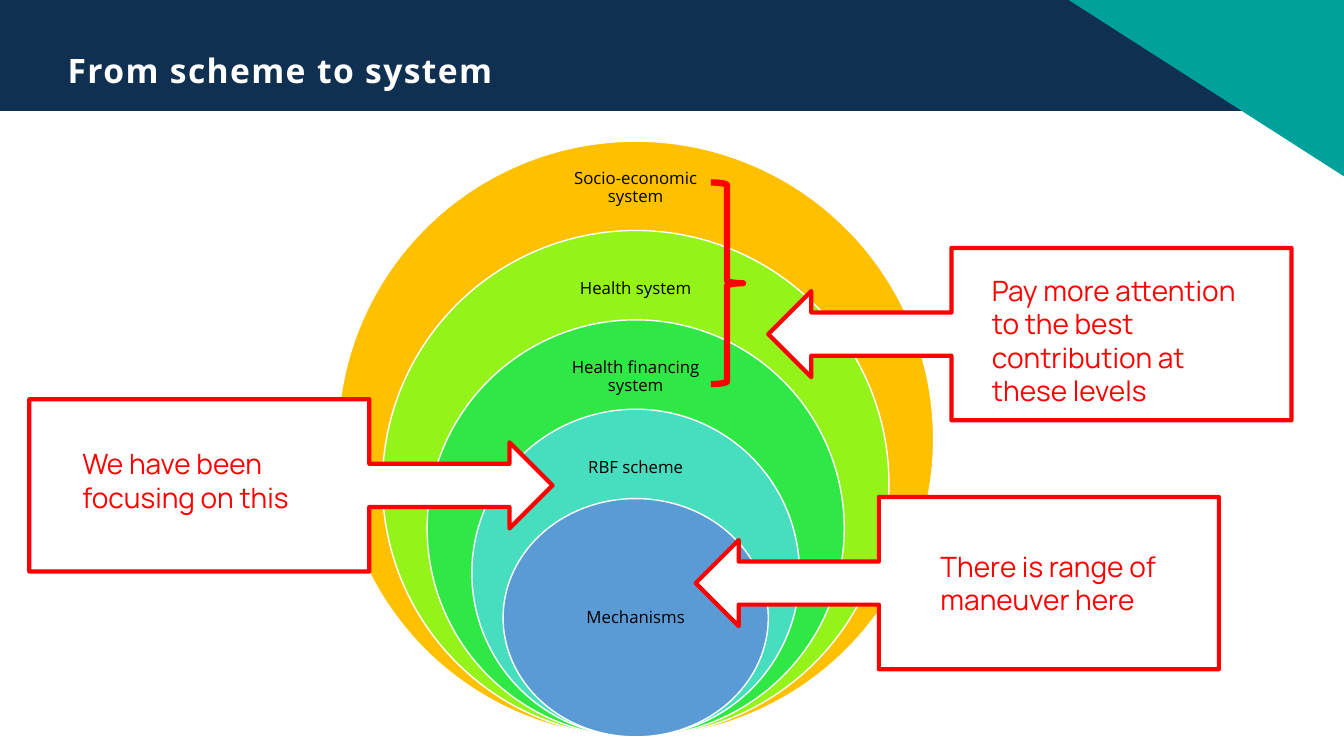
from dataclasses import dataclass

from pptx import Presentation
from pptx.dml.color import RGBColor
from pptx.enum.shapes import MSO_SHAPE
from pptx.enum.text import MSO_ANCHOR, PP_ALIGN
from pptx.util import Inches, Pt

RECTANGLE = MSO_SHAPE.RECTANGLE
TRIANGLE = MSO_SHAPE.ISOSCELES_TRIANGLE
OVAL = MSO_SHAPE.OVAL
ARROW_CALLOUT = MSO_SHAPE.LEFT_ARROW_CALLOUT
BRACE = MSO_SHAPE.RIGHT_BRACE
LEFT, CENTER = PP_ALIGN.LEFT, PP_ALIGN.CENTER
TOP, MIDDLE, BOTTOM = MSO_ANCHOR.TOP, MSO_ANCHOR.MIDDLE, MSO_ANCHOR.BOTTOM

NAVY = RGBColor(0x0F, 0x30, 0x51)
TEAL = RGBColor(0x00, 0xA1, 0x9A)
WHITE = RGBColor(0xFF, 0xFF, 0xFF)
BLACK = RGBColor(0x00, 0x00, 0x00)
RED = RGBColor(0xFF, 0x00, 0x00)
AMBER = RGBColor(0xFF, 0xC0, 0x00)
LIME = RGBColor(0x94, 0xF3, 0x19)
GREEN = RGBColor(0x30, 0xE8, 0x45)
AQUA = RGBColor(0x46, 0xDE, 0xBF)
BLUE = RGBColor(0x5B, 0x9B, 0xD5)

SLIDE_WIDTH, SLIDE_HEIGHT = Inches(13.33), Inches(7.5)

TITLE_FONT = {"name": "Open Sans", "size": Pt(24), "bold": True}
LABEL_FONT = {"name": "Open Sans", "size": Pt(12)}
CALLOUT_FONT = {"name": "Manrope", "size": Pt(20)}


@dataclass(frozen=True)
class Box:
    """Place and size in percent of the slide's width and height."""
    left: float
    top: float
    width: float
    height: float

    def lengths(self) -> tuple[int, int, int, int]:
        return (int(SLIDE_WIDTH * self.left / 100),
                int(SLIDE_HEIGHT * self.top / 100),
                int(SLIDE_WIDTH * self.width / 100),
                int(SLIDE_HEIGHT * self.height / 100))


@dataclass(frozen=True)
class Level:
    label: str
    color: RGBColor
    label_middle: float
    label_width: float
    label_height: float = 5.5


@dataclass(frozen=True)
class Callout:
    text: str
    left: float
    top: float
    text_box: Box
    rotation: float = 0


# Nested levels, outermost first: all share one centre line and one bottom
CENTER_LINE, LEVEL_BOTTOM = 47.3, 97.47
FIRST_TOP, LEVEL_STEP = 18.67, 11.82
INNERMOST_WIDTH = 19.73
LEVELS = [
    Level("Socio-economic system", AMBER, 24.87, 11.78),
    Level("Health system", LIME, 38.2, 11.48),
    Level("Health financing system", GREEN, 49.87, 11.33),
    Level("RBF scheme", AQUA, 61.93, 9.3),
    Level("Mechanisms", BLUE, 81.73, 9.83, 11.2),
]

CALLOUT_WIDTH, CALLOUT_HEIGHT = 38.93, 22.8
CALLOUTS = [
    Callout("There is range of maneuver here", 51.76, 65.73,
            Box(69.24, 72, 21.46, 10.27)),
    Callout("We have been focusing on this", 2.18, 52.8,
            Box(5.4, 58.4, 21.46, 10.27), rotation=180),
    Callout("Pay more attention to the best contribution at these levels",
            57.16, 32.8, Box(73.07, 35.47, 21.46, 19.33)),
]


def apply_format(target, values: dict) -> None:
    for name, value in values.items():
        setattr(target, name, value)


def add_shape(slide, kind, box: Box, fill: RGBColor | None = None,
              line: RGBColor | None = None, line_width: float = 1,
              rotation: float = 0):
    shape = slide.shapes.add_shape(kind, *box.lengths())
    shape.shadow.inherit = False
    shape.rotation = rotation
    if fill is None:
        shape.fill.background()
    else:
        shape.fill.solid()
        shape.fill.fore_color.rgb = fill
    if line is None:
        shape.line.fill.background()
    else:
        shape.line.color.rgb = line
        shape.line.width = Pt(line_width)
    return shape


def write_text(shape, text: str, font: dict, color: RGBColor, anchor,
               alignment, margin: float | None = None,
               line_spacing: float = 1.0):
    frame = shape.text_frame
    apply_format(frame, {"word_wrap": True, "vertical_anchor": anchor})
    if margin is not None:
        for side in ("left", "top", "right", "bottom"):
            setattr(frame, f"margin_{side}", Inches(margin))
    paragraph = frame.paragraphs[0]
    apply_format(paragraph, {"alignment": alignment,
                             "line_spacing": line_spacing})
    run = paragraph.add_run()
    run.text = text
    apply_format(run.font, font)
    run.font.color.rgb = color
    return run


def add_header(slide) -> None:
    add_shape(slide, RECTANGLE, Box(0, 0, 100, 14.67), NAVY)
    corner = add_shape(slide, TRIANGLE, Box(79.52, 0, 20.48, 23.33), TEAL,
                       rotation=180)
    corner.adjustments[0] = 0

    title = slide.shapes.title
    # Bring the title in front of the band
    title.element.getparent().append(title.element)
    place = Box(5.03, 6.67, 75.77, 5.33).lengths()
    apply_format(title, dict(zip(("left", "top", "width", "height"), place)))
    run = write_text(title, "From scheme to system", TITLE_FONT, WHITE,
                     BOTTOM, LEFT, margin=0)
    run.font._element.set("spc", "100")  # letter spacing of one point


def add_level(slide, index: int, level: Level) -> None:
    top = FIRST_TOP + index * LEVEL_STEP
    height = LEVEL_BOTTOM - top
    width = height * SLIDE_HEIGHT / SLIDE_WIDTH
    if index == len(LEVELS) - 1:
        width = INNERMOST_WIDTH
    add_shape(slide, OVAL, Box(CENTER_LINE - width / 2, top, width, height),
              level.color, WHITE)
    label_box = Box(CENTER_LINE - level.label_width / 2,
                    level.label_middle - level.label_height / 2,
                    level.label_width, level.label_height)
    label = slide.shapes.add_textbox(*label_box.lengths())
    write_text(label, level.label, LABEL_FONT, BLACK, MIDDLE, CENTER,
               margin=0.09, line_spacing=0.9)


def add_callout(slide, callout: Callout) -> None:
    box = Box(callout.left, callout.top, CALLOUT_WIDTH, CALLOUT_HEIGHT)
    add_shape(slide, ARROW_CALLOUT, box, WHITE, RED, 3, callout.rotation)
    text_box = slide.shapes.add_textbox(*callout.text_box.lengths())
    write_text(text_box, callout.text, CALLOUT_FONT, RED, TOP, LEFT)


def main() -> None:
    presentation = Presentation()
    presentation.slide_width = SLIDE_WIDTH
    presentation.slide_height = SLIDE_HEIGHT
    slide = presentation.slides.add_slide(presentation.slide_layouts[5])

    add_header(slide)
    for index, level in enumerate(LEVELS):
        add_level(slide, index, level)
    for callout in CALLOUTS:
        add_callout(slide, callout)
    # Brace around the three outer levels
    add_shape(slide, BRACE, Box(52.89, 24.13, 2.4, 26.67), None, RED, 4.5)

    presentation.save("out.pptx")


if __name__ == "__main__":
    main()
